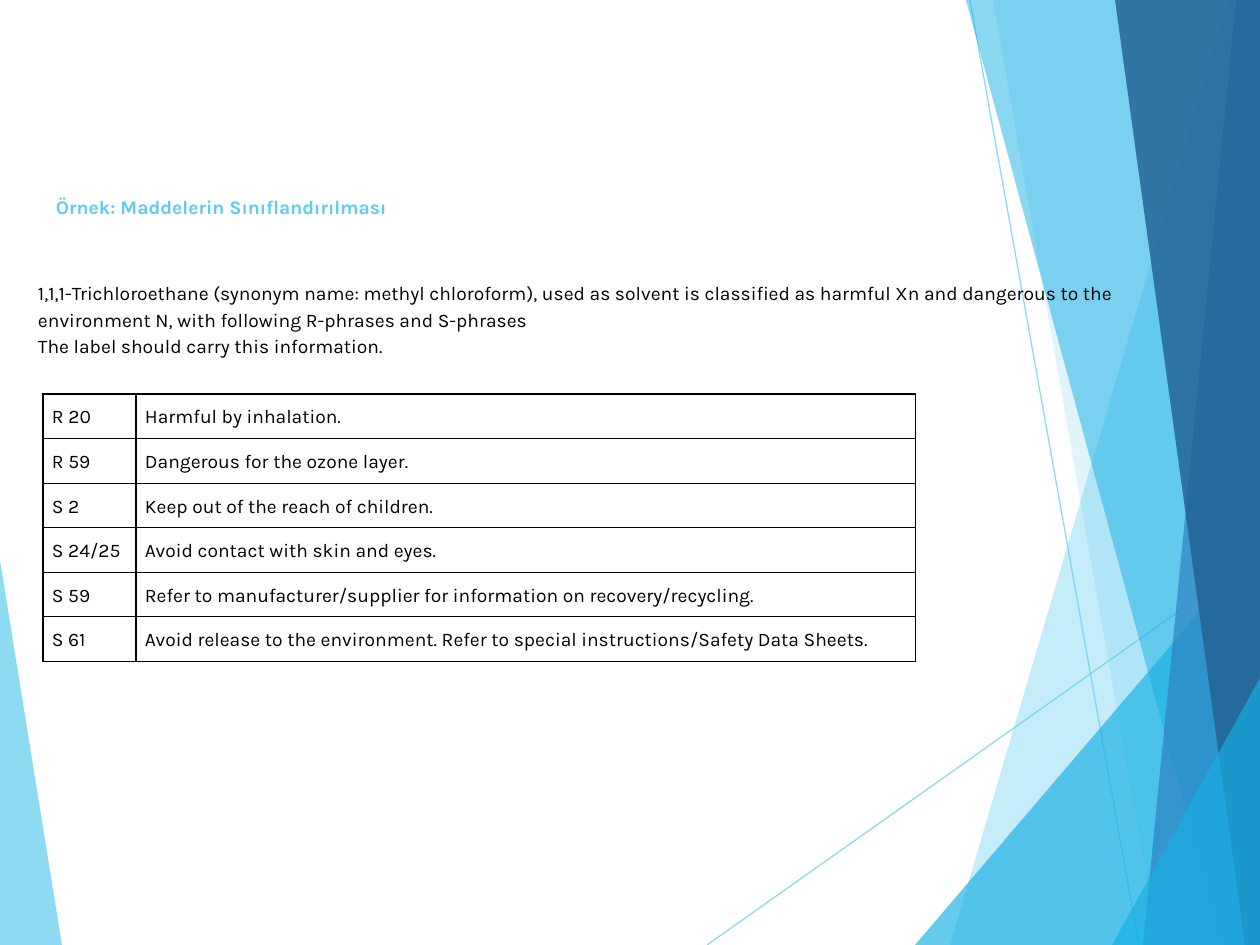
from lxml.etree import SubElement
from pptx import Presentation
from pptx.dml.color import RGBColor
from pptx.enum.shapes import MSO_CONNECTOR
from pptx.enum.text import MSO_ANCHOR
from pptx.oxml.ns import qn
from pptx.util import Pt

SCALE = 914400 / 126  # EMU in one px
PAGE = (0, 0, 1260, 945)
TITLE = (43, 179, 1174, 79)
TABLE = (43, 394, 873, 262)
BODY = (25, 239, 1109, 158)
CODE_WIDTH = 93
FONT = "Karla"
SKY, CYAN, BLUE, NAVY, BLACK = "5FCBEF", "17B0E4", "2E83C3", "226292", "000000"

# Facets from back to front: colour, opacity in percent, corners
FACETS = [
    (SKY, 70, [(0, 560), (62, 945), (0, 945)]),
    (SKY, 36, [(1228, 0), (950, 945), (1260, 945), (1260, 0)]),
    (SKY, 20, [(993, 0), (1158, 945), (1260, 945), (1260, 0)]),
    (CYAN, 66, [(915, 945), (1260, 541), (1260, 945)]),
    (CYAN, 50, [(966, 0), (1222, 945), (1260, 945), (1260, 0)]),
    (BLUE, 70, [(1236, 0), (1143, 945), (1260, 945), (1260, 0)]),
    (NAVY, 82, [(1115, 0), (1245, 945), (1260, 945), (1260, 0)]),
    (CYAN, 66, [(1112, 945), (1260, 678), (1260, 945)]),
]
RAYS = [((707, 945), (1260, 554)), ((970, 0), (1139, 945))]

PHRASES = [
    ("R 20", "Harmful by inhalation."),
    ("R 59", "Dangerous for the ozone layer."),
    ("S 2", "Keep out of the reach of children."),
    ("S 24/25", "Avoid contact with skin and eyes."),
    ("S 59", "Refer to manufacturer/supplier for information on recovery/recycling."),
    ("S 61", "Avoid release to the environment. Refer to special instructions/Safety Data Sheets."),
]
BODY_TEXT = [
    "1,1,1-Trichloroethane (synonym name: methyl chloroform), used as solvent is classified "
    "as harmful Xn and dangerous to the environment N, with following R-phrases and S-phrases",
    "The label should carry this information.",
]


def emu(px):
    return round(px * SCALE)


def set_color(target, color, opacity=100):
    """Colour a font, or a fill with an optional opacity."""
    if hasattr(target, "solid"):
        target.solid()
        target.fore_color.rgb = RGBColor.from_string(color)
        if opacity < 100:
            for node in target._xPr.iter(qn("a:srgbClr")):
                SubElement(node, qn("a:alpha"), val=str(opacity * 1000))
    else:
        target.color.rgb = RGBColor.from_string(color)


def write(frame, paragraphs, size=11, color=BLACK, bold=False):
    for index, text in enumerate(paragraphs):
        para = frame.add_paragraph() if index else frame.paragraphs[0]
        para.line_spacing = 1.15
        span = para.add_run()
        span.text = text
        span.font.name = FONT
        span.font.size = Pt(size)
        span.font.bold = bold
        set_color(span.font, color)


def set_margins(target, px):
    target.margin_left = target.margin_right = emu(px)
    target.margin_top = target.margin_bottom = emu(px)


def add_text(page, box, paragraphs, anchor=MSO_ANCHOR.TOP, **style):
    frame = page.shapes.add_textbox(*map(emu, box)).text_frame
    frame.word_wrap = True
    frame.vertical_anchor = anchor
    set_margins(frame, 13)
    write(frame, paragraphs, **style)


def add_facet(page, box, color, opacity, corners):
    builder = page.shapes.build_freeform(*corners[0], scale=SCALE)
    builder.add_line_segments(corners[1:], close=True)
    facet = builder.convert_to_shape(emu(box[0]), emu(box[1]))
    facet.shadow.inherit = False
    facet.line.fill.background()
    set_color(facet.fill, color, opacity)


def add_ray(page, box, start, end):
    left, top = box[:2]
    ray = page.shapes.add_connector(
        MSO_CONNECTOR.STRAIGHT,
        emu(left + start[0]), emu(top + start[1]),
        emu(left + end[0]), emu(top + end[1]))
    ray.line.width = Pt(0.75)
    set_color(ray.line.fill, SKY, 70)
    SubElement(ray._element.spPr, qn("a:effectLst"))


def add_backdrop(page, box):
    # The rays lie between the left facet and the right-hand ones
    add_facet(page, box, *FACETS[0])
    for start, end in RAYS:
        add_ray(page, box, start, end)
    for facet in FACETS[1:]:
        add_facet(page, box, *facet)


def add_borders(cell):
    properties = cell._tc.get_or_add_tcPr()
    for position, side in enumerate(("lnL", "lnR", "lnT", "lnB")):
        line = properties.makeelement(qn(f"a:{side}"), {"w": str(Pt(0.75))})
        fill = SubElement(line, qn("a:solidFill"))
        SubElement(fill, qn("a:srgbClr"), val=BLACK)
        properties.insert(position, line)


def add_phrase_table(page, box):
    table = page.shapes.add_table(len(PHRASES), 2, *map(emu, box)).table
    table.first_row = table.horz_banding = False
    table.columns[0].width = emu(CODE_WIDTH)
    table.columns[1].width = emu(box[2] - CODE_WIDTH)
    for row, phrase in zip(table.rows, PHRASES):
        row.height = emu(box[3] / len(PHRASES))
        for cell, text in zip(row.cells, phrase):
            cell.fill.background()
            set_margins(cell, 9)
            add_borders(cell)
            write(cell.text_frame, [text])


def main():
    deck = Presentation()
    deck.slide_width, deck.slide_height = emu(PAGE[2]), emu(PAGE[3])
    page = deck.slides.add_slide(deck.slide_layouts[6])
    add_backdrop(page, PAGE)
    add_text(page, TITLE, ["Örnek: Maddelerin Sınıflandırılması"], color=SKY, bold=True)
    add_phrase_table(page, TABLE)
    add_text(page, BODY, BODY_TEXT, anchor=MSO_ANCHOR.MIDDLE)
    deck.save("out.pptx")


if __name__ == "__main__":
    main()
